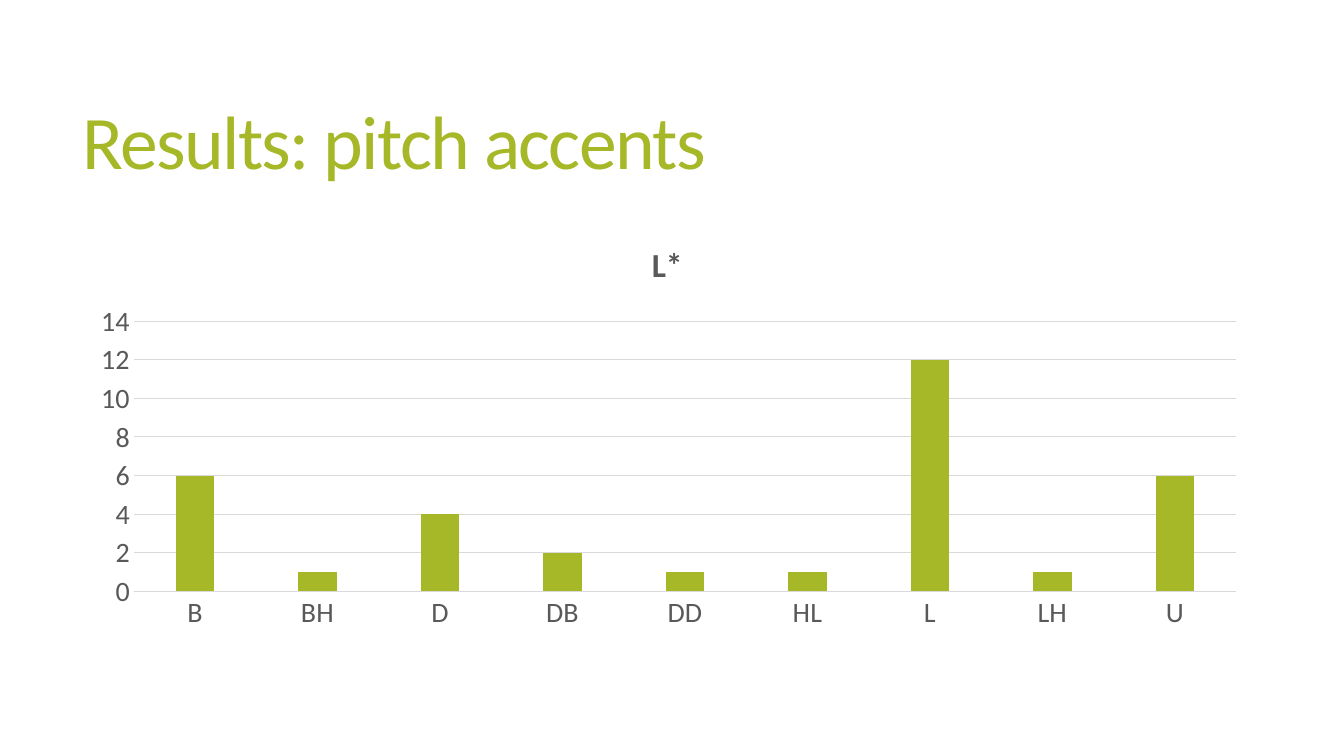
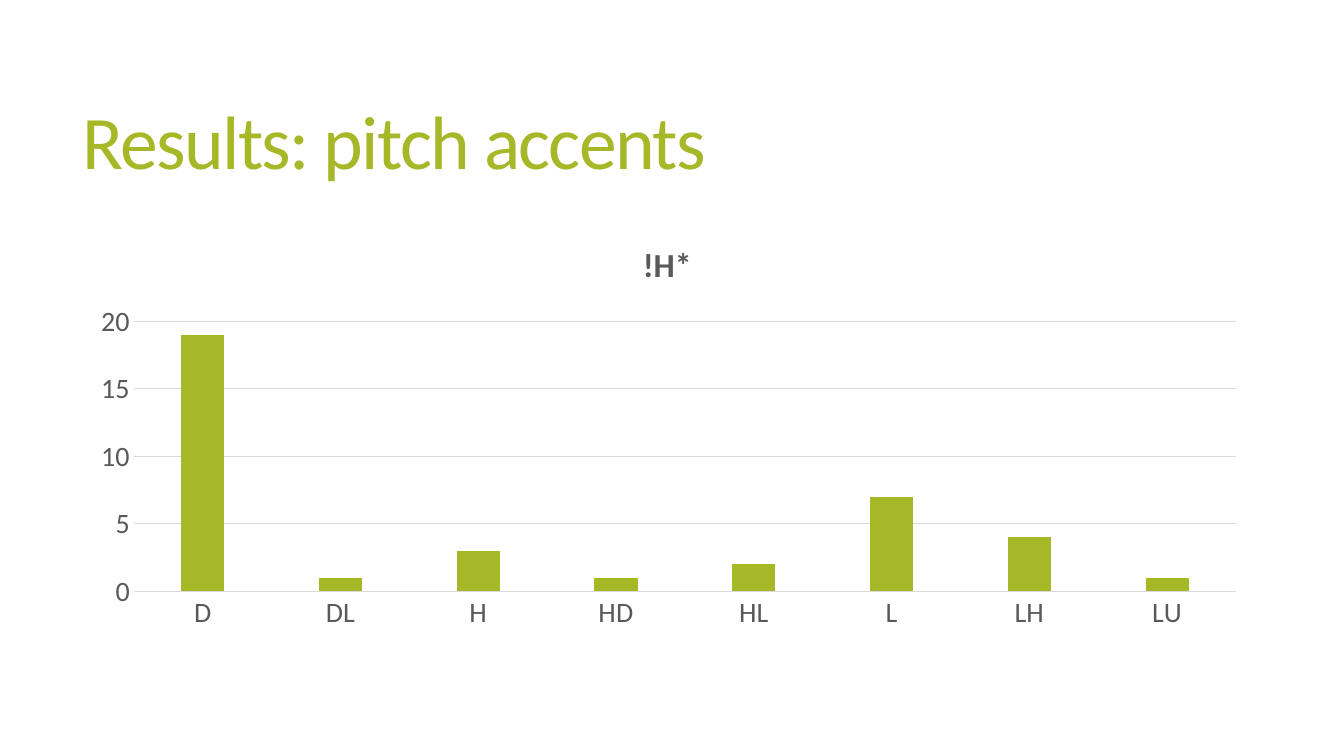
from lxml.etree import SubElement
from pptx import Presentation
from pptx.chart.data import CategoryChartData
from pptx.dml.color import RGBColor
from pptx.enum.chart import XL_CHART_TYPE, XL_TICK_MARK
from pptx.enum.text import MSO_ANCHOR, MSO_AUTO_SIZE, PP_ALIGN
from pptx.oxml.ns import qn
from pptx.util import Cm, Pt


def color(value):
    return RGBColor.from_string(value)


class Deck:
    """Hold the shared style, the presentation and the current slide."""

    font_name = "Calibri"
    accent = "A6B727"
    text_color = "595959"
    rule_color = "D9D9D9"
    title_box = Cm(1.83), Cm(1.4), Cm(29.92), Cm(4.6)
    chart_box = Cm(1.88), Cm(5.59), Cm(29.87), Cm(10.46)
    plot_layout = {"x": 0.05, "y": 0.24, "w": 0.93, "h": 0.65}

    def __init__(self):
        self.presentation = Presentation()
        self.presentation.slide_width = Cm(33.87)
        self.presentation.slide_height = Cm(19.05)
        self.slide = None

    def style_font(self, font, size, value, bold=False):
        font.name = self.font_name
        font.size = Pt(size)
        font.bold = bold
        font.color.rgb = color(value)

    def style_line(self, line):
        line.color.rgb = color(self.rule_color)
        line.width = Pt(0.75)

    def add_slide(self, title):
        layout = self.presentation.slide_layouts[5]
        self.slide = self.presentation.slides.add_slide(layout)
        shape = self.slide.shapes.title
        shape.left, shape.top, shape.width, shape.height = self.title_box
        frame = shape.text_frame
        frame.auto_size = MSO_AUTO_SIZE.NONE
        frame.word_wrap = True
        frame.vertical_anchor = MSO_ANCHOR.MIDDLE
        paragraph = frame.paragraphs[0]
        paragraph.alignment = PP_ALIGN.LEFT
        paragraph.line_spacing = 0.85
        run = paragraph.add_run()
        run.text = title
        self.style_font(run.font, 54, self.accent)
        run.font._element.set("spc", "-120")

    def add_column_chart(self, title, counts, maximum, step):
        data = CategoryChartData()
        data.categories = list(counts)
        data.add_series("Series 1", list(counts.values()))
        chart = self.slide.shapes.add_chart(
            XL_CHART_TYPE.COLUMN_CLUSTERED, *self.chart_box, data).chart
        self.style_font(chart.font, 20, self.text_color)
        chart.has_legend = False
        chart.has_title = True
        run = chart.chart_title.text_frame.paragraphs[0].add_run()
        run.text = title
        self.style_font(run.font, 24, self.text_color, bold=True)

        plot = chart.plots[0]
        plot.vary_by_categories = False
        plot.gap_width = 219
        plot.overlap = -27
        fill = plot.series[0].format.fill
        fill.solid()
        fill.fore_color.rgb = color(self.accent)

        for axis in (chart.category_axis, chart.value_axis):
            axis.major_tick_mark = axis.minor_tick_mark = XL_TICK_MARK.NONE
            self.style_font(axis.tick_labels.font, 20, self.text_color)
        self.style_line(chart.category_axis.format.line)
        value_axis = chart.value_axis
        value_axis.format.line.fill.background()
        value_axis.minimum_scale = 0
        value_axis.maximum_scale = maximum
        value_axis.major_unit = step
        self.style_line(value_axis.major_gridlines.format.line)
        self.place_plot(chart)

    def place_plot(self, chart):
        area = chart.element.find(".//" + qn("c:plotArea"))
        layout = area.find(qn("c:layout"))
        if layout is None:
            layout = SubElement(area, qn("c:layout"))
            area.insert(0, layout)
        manual = SubElement(layout, qn("c:manualLayout"))
        settings = {"layoutTarget": "inner", "xMode": "edge", "yMode": "edge"}
        for name, value in (settings | self.plot_layout).items():
            SubElement(manual, qn("c:" + name)).set("val", str(value))

    def save(self):
        self.presentation.save("out.pptx")


def main():
    charts = [
        ("L*", {"B": 6, "BH": 1, "D": 4, "DB": 2, "DD": 1, "HL": 1,
                "L": 12, "LH": 1, "U": 6}, 14, 2),
        ("!H*", {"D": 19, "DL": 1, "H": 3, "HD": 1, "HL": 2, "L": 7,
                 "LH": 4, "LU": 1}, 20, 5),
    ]
    deck = Deck()
    for chart in charts:
        deck.add_slide("Results: pitch accents")
        deck.add_column_chart(*chart)
    deck.save()


if __name__ == "__main__":
    main()
